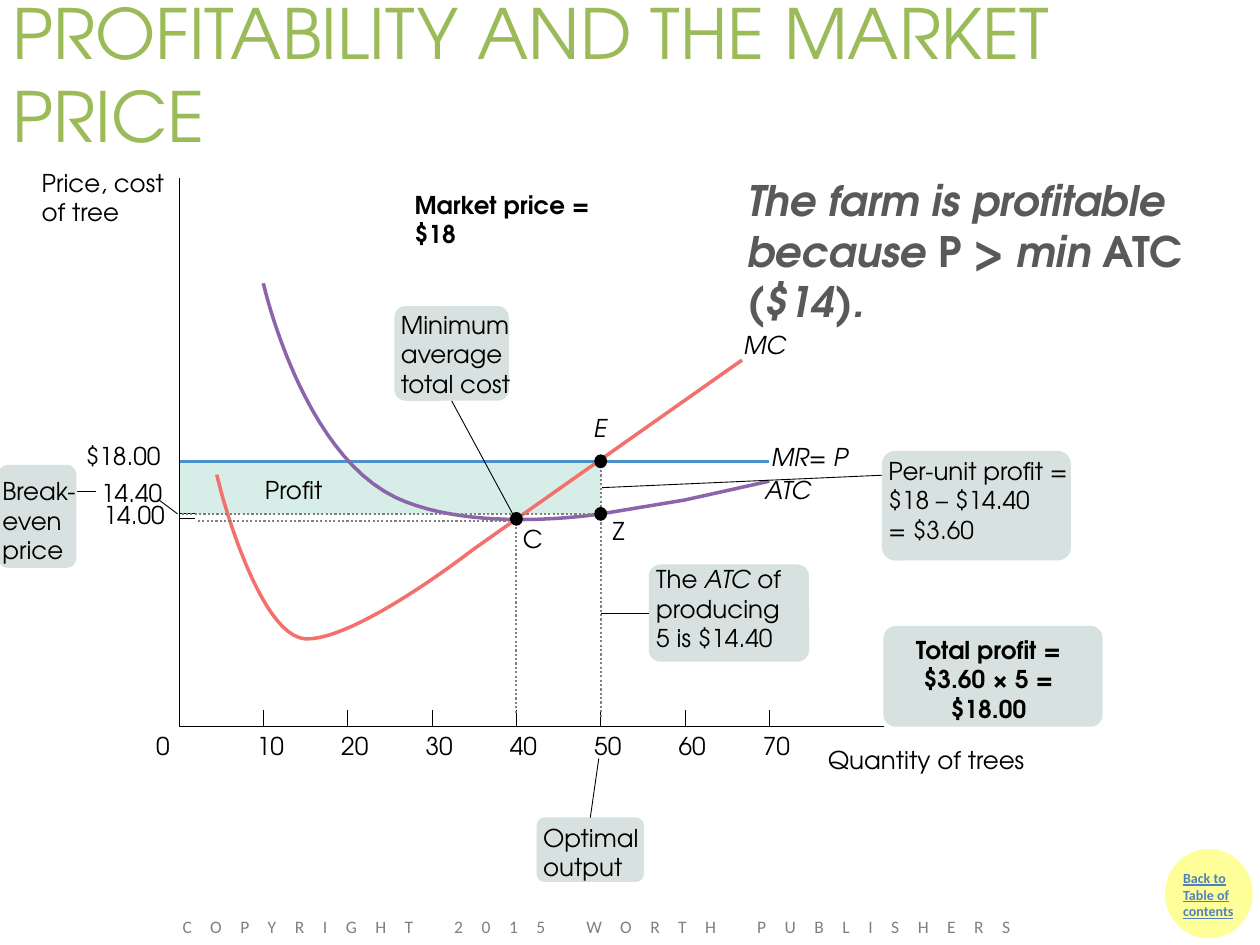
import pptx
import pptx.dml.color
import pptx.enum.dml
import pptx.enum.shapes
import pptx.enum.text
import pptx.oxml.ns
import pptx.util
from lxml import etree

Cm = pptx.util.Cm
Pt = pptx.util.Pt
RGBColor = pptx.dml.color.RGBColor
SHAPE = pptx.enum.shapes.MSO_SHAPE
ALIGN = pptx.enum.text.PP_ALIGN

BLACK = RGBColor(0x00, 0x00, 0x00)
GREEN = RGBColor(0x9B, 0xBB, 0x59)
DARK_GRAY = RGBColor(0x59, 0x59, 0x59)
GRAY = RGBColor(0x80, 0x80, 0x80)
LINK_BLUE = RGBColor(0x4F, 0x81, 0xBD)
YELLOW = RGBColor(0xFF, 0xFF, 0x99)
MINT = RGBColor(0xD7, 0xED, 0xE7)
CALLOUT_GRAY = RGBColor(0xD7, 0xE2, 0xE0)
PRICE_BLUE = RGBColor(0x4B, 0x8F, 0xCC)
ATC_PURPLE = RGBColor(0x8C, 0x64, 0xAB)
MC_RED = RGBColor(0xF3, 0x71, 0x6D)

MAIN_FONT = "TeX Gyre Adventor"
SMALL_FONT = "Calibri"
STEP = 1.7
LINE_HEIGHT = 0.6

ATC_CURVE = [
    [(1.7, 2.13), (1.7, 2.13), (2.46, 5.54), (4.37, 6.45)],
    [(4.37, 6.45), (5.94, 7.19), (8.5, 6.78), (8.5, 6.78)],
    [(8.5, 6.78), (10.19, 6.5)],
    [(10.19, 6.5), (11.9, 6.12)],
]
MC_CURVE = [
    [(11.35, 3.68), (11.02, 3.91)],
    [(11.02, 3.91), (5.94, 7.49)],
    [(5.94, 7.49), (5.94, 7.49), (3.56, 9.35), (2.54, 9.3)],
    [(2.54, 9.3), (1.6, 9.22), (0.84, 6.3), (0.84, 6.3)],
    [(0.84, 6.3), (0.76, 5.99)],
]


def add_text(slide, box, paragraphs, size=14, color=BLACK, font=MAIN_FONT, bold=False,
             italic=False, underline=False, wrap=True, inset=True, align=ALIGN.LEFT, spacing=None):
    shape = slide.shapes.add_textbox(*map(Cm, box))
    frame = shape.text_frame
    frame.word_wrap = wrap
    if not inset:
        frame.margin_left = frame.margin_right = frame.margin_top = frame.margin_bottom = 0
    for index, runs in enumerate(paragraphs):
        paragraph = frame.paragraphs[0] if index == 0 else frame.add_paragraph()
        paragraph.alignment = align
        for text, slanted in runs:
            run = paragraph.add_run()
            run.text = text
            run.font.name = font
            run.font.size = Pt(size)
            run.font.color.rgb = color
            run.font.bold = bold
            run.font.italic = slanted or italic
            run.font.underline = underline
            if spacing:
                run.font._element.set("spc", str(spacing))
    return shape


def plain(text):
    return [[(text, False)]]


def add_filled(slide, kind, box, color):
    shape = slide.shapes.add_shape(kind, *map(Cm, box))
    shape.shadow.inherit = False
    shape.fill.solid()
    shape.fill.fore_color.rgb = color
    shape.line.fill.background()
    return shape


def add_line(slide, start, end, color=BLACK, width=0.5, dotted=False):
    kind = pptx.enum.shapes.MSO_CONNECTOR.STRAIGHT
    line = slide.shapes.add_connector(kind, *map(Cm, (*start, *end)))
    line.line.color.rgb = color
    line.line.width = Pt(width)
    if dotted:
        line.line.dash_style = pptx.enum.dml.MSO_LINE.ROUND_DOT
    etree.SubElement(line._element.spPr, pptx.oxml.ns.qn("a:effectLst"))
    return line


def add_outline(slide, points, color, width):
    points = [(Cm(x), Cm(y)) for x, y in points]
    builder = slide.shapes.build_freeform(*points[0])
    builder.add_line_segments(points[1:], close=False)
    shape = builder.convert_to_shape()
    shape.shadow.inherit = False
    shape.fill.background()
    shape.line.color.rgb = color
    shape.line.width = Pt(width)


def blend(controls, t):
    while len(controls) > 1:
        controls = [tuple(a + (b - a) * t for a, b in zip(first, second))
                    for first, second in zip(controls, controls[1:])]
    return controls[0]


def curve_points(segments, steps=24):
    points = [segments[0][0]]
    for controls in segments:
        count = steps if len(controls) > 2 else 1
        points += [blend(controls, step / count) for step in range(1, count + 1)]
    return points


def draw_graph(slide, left, top, width, height):
    def at(x, y):
        return left + x, top + y

    def label(x, y, label_width, runs, lines=1, **style):
        box = (*at(x, y), label_width, LINE_HEIGHT * lines)
        add_text(slide, box, [runs], inset=False, **style)

    market, unit_cost, minimum = 5.72, 6.78, 6.88
    optimum, cheapest = 5 * STEP, 4 * STEP
    add_filled(slide, SHAPE.RECTANGLE, (*at(0, market), optimum, unit_cost - market), MINT)

    for level in (market, unit_cost, minimum):
        add_line(slide, at(0, level), at(0.33, level))
    label(-0.46, height + 0.08, 0.28, [("0", False)], wrap=False)
    for index in range(1, 8):
        x = index * STEP
        add_line(slide, at(x, height), at(x, height - 0.33))
        label(x - 0.13, height + 0.08, 0.56, [(str(index * 10), False)], wrap=False)
    add_line(slide, at(-0.03, unit_cost), at(-0.43, 6.48))

    add_line(slide, at(0, market), at(7 * STEP, market), PRICE_BLUE, 1.5)
    for segments, color in ((ATC_CURVE, ATC_PURPLE), (MC_CURVE, MC_RED)):
        add_outline(slide, [at(x, y) for x, y in curve_points(segments)], color, 2)
    add_outline(slide, [at(width, height), at(0, height), at(0, 0)], BLACK, 0.5)

    for start, end in (
        ((optimum, market), (optimum, 10.87)),
        ((cheapest, 6.96), (cheapest, 10.82)),
        ((0.38, 6.93), (6.65, 6.93)),
        ((0.05, unit_cost), (8.43, unit_cost)),
    ):
        add_line(slide, at(*start), at(*end), GRAY, 1.25, dotted=True)
    for x, y in ((cheapest, minimum), (optimum, unit_cost), (optimum, market)):
        add_filled(slide, SHAPE.OVAL, (*at(x - 0.13, y - 0.14), 0.26, 0.28), BLACK)

    for x, y, label_width, runs in (
        (11.38, 3.07, 0.94, [("MC", True)]),
        (1.73, 5.99, 1.19, [("Profit", False)]),
        (11.81, 5.99, 1.09, [("ATC", True)]),
        (11.94, 5.33, 1.68, [("MR", True), ("= ", False), ("P", True)]),
        (6.93, 6.99, 0.41, [("C", False)]),
        (8.74, 6.83, 0.23, [("Z", False)]),
        (8.36, 4.75, 0.36, [("E", True)]),
        (-1.52, 6.5, 1.24, [("14.00", False)]),
        (-1.57, 6.05, 1.24, [("14.40", False)]),
        (-1.88, 5.31, 1.52, [("$18.00", False)]),
    ):
        label(x, y, label_width, runs, wrap=False)
    label(4.75, 0.25, 4.5, [("Market price = $18", False)], lines=2, bold=True)
    label(-2.77, -0.2, 2.79, [("Price, cost of tree", False)], lines=2)
    label(13.08, 11.43, 7.44, [("Quantity of trees", False)])


def draw_callout(slide, box, offset, text_width, paragraphs, leader=None, site=None, **style):
    left, top, width, height = box
    shape = add_filled(slide, SHAPE.ROUNDED_RECTANGLE, box, CALLOUT_GRAY)
    shape.adjustments[0] = 0.12
    if leader:
        line = add_line(slide, *leader)
        if site is not None:
            line.end_connect(shape, site)
    text_box = (left + offset[0], top + offset[1], text_width, height - offset[1])
    add_text(slide, text_box, paragraphs, inset=False, **style)


def draw_callouts(slide):
    draw_callout(slide, (-0.03, 9.37, 1.57, 2.08), (0.08, 0.23), 1.68,
                 plain("Break- even price"), ((1.93, 9.91), (1.55, 9.91)))
    draw_callout(slide, (7.95, 6.17, 2.31, 1.91), (0.13, 0.08), 2.39,
                 plain("Minimum average total cost"), ((10.39, 10.46), (9.1, 8.08)), 2)
    draw_callout(slide, (10.82, 16.48, 2.16, 1.3), (0.13, 0.11), 2.39,
                 plain("Optimal output"), ((12.07, 15.29), (11.9, 16.48)), 0)
    draw_callout(slide, (17.78, 9.09, 3.81, 2.21), (0.13, 0.1), 3.89,
                 plain("Per-unit profit = $18 – $14.40") + plain("= $3.60"),
                 ((12.14, 9.83), (17.78, 9.58)))
    draw_callout(slide, (17.81, 12.62, 4.42, 2.03), (0.23, 0.18), 3.78,
                 plain("Total profit = $3.60 × 5 = $18.00"), bold=True, align=ALIGN.CENTER)
    draw_callout(slide, (13.08, 11.38, 3.23, 1.96), (0.15, 0), 2.84,
                 [[("The ", False), ("ATC", True), (" of producing 5 is $14.40", False)]],
                 ((12.12, 12.36), (13.08, 12.36)), 1)


def draw_headings(slide):
    title = add_text(slide, (0, 0, 25.4, 2.97), plain("PROFITABILITY AND THE MARKET PRICE"),
                     size=39.6, color=GREEN)
    title.text_frame.vertical_anchor = pptx.enum.text.MSO_ANCHOR.MIDDLE
    message = [("The farm is profitable because ", True), ("P", False), (" > min ", True),
               ("ATC", False), (" ($14).", True)]
    add_text(slide, (14.81, 3.4, 9.98, 3.33), [message], size=24, color=DARK_GRAY, bold=True)


def draw_contents_button(slide, left, top):
    circle = add_filled(slide, SHAPE.OVAL, (left, top, 1.7, 1.73), YELLOW)
    circle.line.color.rgb = YELLOW
    circle.line.width = Pt(2)
    add_text(slide, (left + 0.08, top + 0.25, 1.83, 1.7), plain("Back to Table of contents"),
             size=8, color=LINK_BLUE, font=SMALL_FONT, bold=True, underline=True)


def draw_footer(slide, left, top):
    add_text(slide, (left, top, 19.71, 0.64), plain("COPYRIGHT 2015 WORTH PUBLISHERS"),
             size=10, color=GRAY, font=SMALL_FONT, spacing=1060)


def main():
    presentation = pptx.Presentation()
    presentation.slide_width = Cm(25.4)
    presentation.slide_height = Cm(19.05)
    slide = presentation.slides.add_slide(presentation.slide_layouts[6])
    draw_contents_button(slide, 23.52, 17.15)
    draw_headings(slide)
    draw_graph(slide, 3.61, 3.58, 14.22, 11.07)
    draw_callouts(slide)
    draw_footer(slide, 3.43, 18.34)
    presentation.save("out.pptx")


if __name__ == "__main__":
    main()
